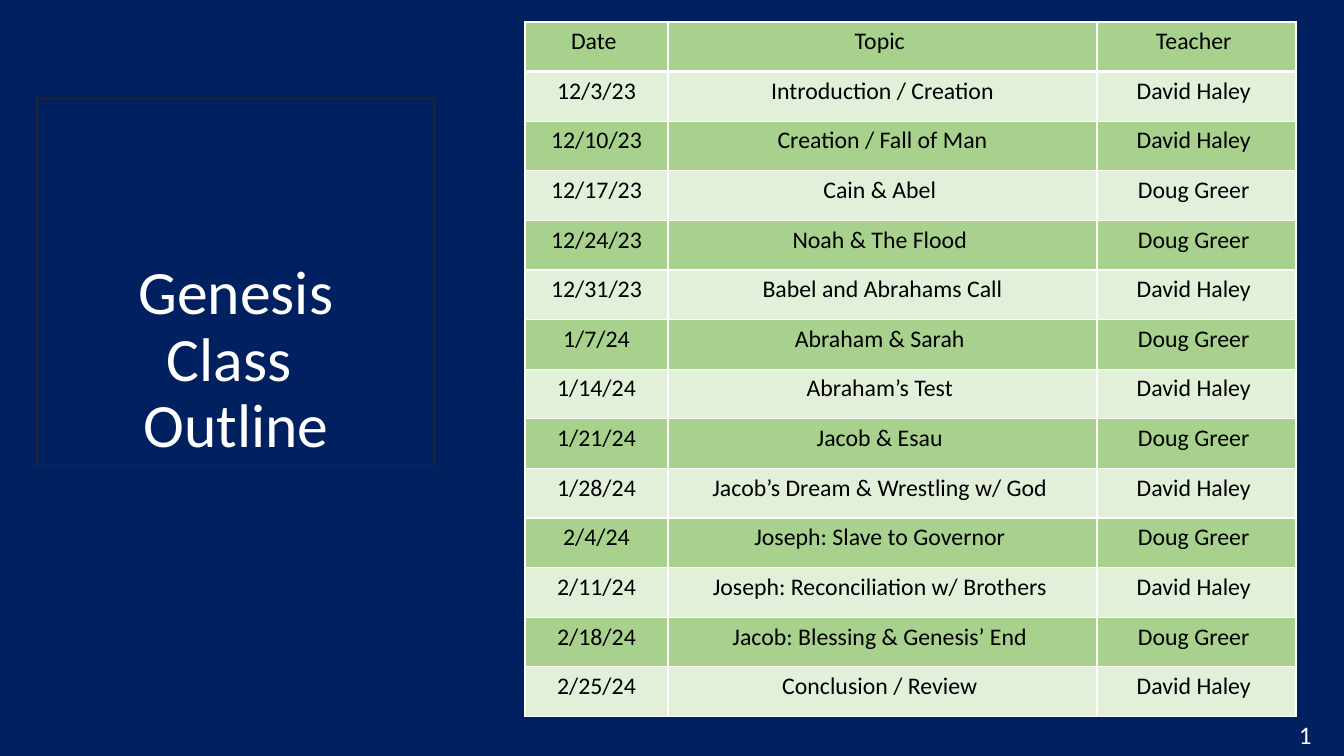
from typing import NamedTuple

from lxml import etree
from pptx import Presentation
from pptx.dml.color import RGBColor
from pptx.enum.shapes import MSO_SHAPE
from pptx.enum.text import MSO_ANCHOR, MSO_AUTO_SIZE, PP_ALIGN
from pptx.oxml.ns import qn
from pptx.util import Emu, Pt

RECTANGLE = MSO_SHAPE.RECTANGLE
BOTTOM = MSO_ANCHOR.BOTTOM
GROW = MSO_AUTO_SIZE.SHAPE_TO_FIT_TEXT
CENTER = PP_ALIGN.CENTER

EMU_PER_PX = 914400 / 100.8
FONT = "Calibri"
NAVY, WHITE, BLACK, CHARCOAL = "002060", "FFFFFF", "000000", "262626"
GREEN, PALE_GREEN = "A9D18E", "E2F0D9"
COLUMN_WIDTHS = (143, 429, 199)
TABLE_HEIGHT = 695


class Lesson(NamedTuple):
    date: str
    topic: str
    teacher: str


DAVID, DOUG = "David Haley ", "Doug Greer "
HEADER = Lesson("Date ", "Topic ", "Teacher ")
LESSONS = [
    Lesson("12/3/23", "Introduction / Creation", DAVID),
    Lesson("12/10/23", "Creation / Fall of Man", DAVID),
    Lesson("12/17/23", "Cain & Abel ", DOUG),
    Lesson("12/24/23", "Noah & The Flood ", DOUG),
    Lesson("12/31/23", "Babel and Abrahams Call", DAVID),
    Lesson("1/7/24", "Abraham & Sarah ", DOUG),
    Lesson("1/14/24", "Abraham’s Test ", DAVID),
    Lesson("1/21/24", "Jacob & Esau ", DOUG),
    Lesson("1/28/24", "Jacob’s Dream & Wrestling w/ God ", DAVID),
    Lesson("2/4/24", "Joseph: Slave to Governor ", DOUG),
    Lesson("2/11/24", "Joseph: Reconciliation w/ Brothers ", DAVID),
    Lesson("2/18/24", "Jacob: Blessing & Genesis’ End ", DOUG),
    Lesson("2/25/24", "Conclusion / Review ", DAVID),
]


def px(n: float) -> Emu:
    return Emu(round(n * EMU_PER_PX))


def rgb(color: str) -> RGBColor:
    return RGBColor.from_string(color)


def add_run(p, text: str, size: float, color: str) -> None:
    r = p.add_run()
    r.text = text
    r.font.name = FONT
    r.font.size = Pt(size)
    r.font.color.rgb = rgb(color)


def set_borders(cell, bottom: float) -> None:
    """Draw white cell borders; they must precede the fill in tcPr."""
    tc_pr = cell._tc.get_or_add_tcPr()
    widths = {"a:lnL": 1, "a:lnR": 1, "a:lnT": 1, "a:lnB": bottom}
    for tag, width in widths.items():
        ln = etree.SubElement(tc_pr, qn(tag), w=str(Pt(width)))
        fill = etree.SubElement(ln, qn("a:solidFill"))
        etree.SubElement(fill, qn("a:srgbClr"), val=WHITE)


def add_title(s) -> None:
    box = s.shapes.add_shape(RECTANGLE, px(37), px(99), px(398), px(367))
    box.shadow.inherit = False
    box.fill.background()
    box.line.color.rgb = rgb(CHARCOAL)
    box.line.width = Pt(0.75)
    tf = box.text_frame
    tf.word_wrap = True
    tf.vertical_anchor = BOTTOM
    first, second = tf.paragraphs[0], tf.add_paragraph()
    for p in (first, second):
        p.alignment = CENTER
        p.line_spacing = 0.9
    add_run(first, "Genesis", 44, WHITE)
    first.add_line_break()
    add_run(first, "Class ", 44, WHITE)
    add_run(second, "Outline", 44, WHITE)


def add_schedule(s) -> None:
    rows = [HEADER, *LESSONS]
    table = s.shapes.add_table(
        len(rows), len(COLUMN_WIDTHS), px(525), px(22),
        px(sum(COLUMN_WIDTHS)), px(TABLE_HEIGHT),
    ).table
    for column, width in zip(table.columns, COLUMN_WIDTHS):
        column.width = px(width)
    for i, lesson in enumerate(rows):
        table.rows[i].height = px(TABLE_HEIGHT / len(rows))
        for j, text in enumerate(lesson):
            cell = table.cell(i, j)
            set_borders(cell, bottom=3 if i == 0 else 1)
            cell.fill.solid()
            cell.fill.fore_color.rgb = rgb(PALE_GREEN if i % 2 else GREEN)
            p = cell.text_frame.paragraphs[0]
            p.alignment = CENTER
            add_run(p, text, 17, BLACK)
            # Keep the header at regular weight
            p.runs[0].font.bold = False


def add_page_number(s) -> None:
    box = s.shapes.add_textbox(px(1289), px(714), px(55), px(40))
    tf = box.text_frame
    tf.word_wrap = True
    tf.auto_size = GROW
    add_run(tf.paragraphs[0], "1", 18, WHITE)


def main() -> None:
    prs = Presentation()
    prs.slide_width, prs.slide_height = px(1344), px(756)
    s = prs.slides.add_slide(prs.slide_layouts[6])
    s.background.fill.solid()
    s.background.fill.fore_color.rgb = rgb(NAVY)

    add_title(s)
    add_schedule(s)
    add_page_number(s)
    prs.save("out.pptx")


if __name__ == "__main__":
    main()
